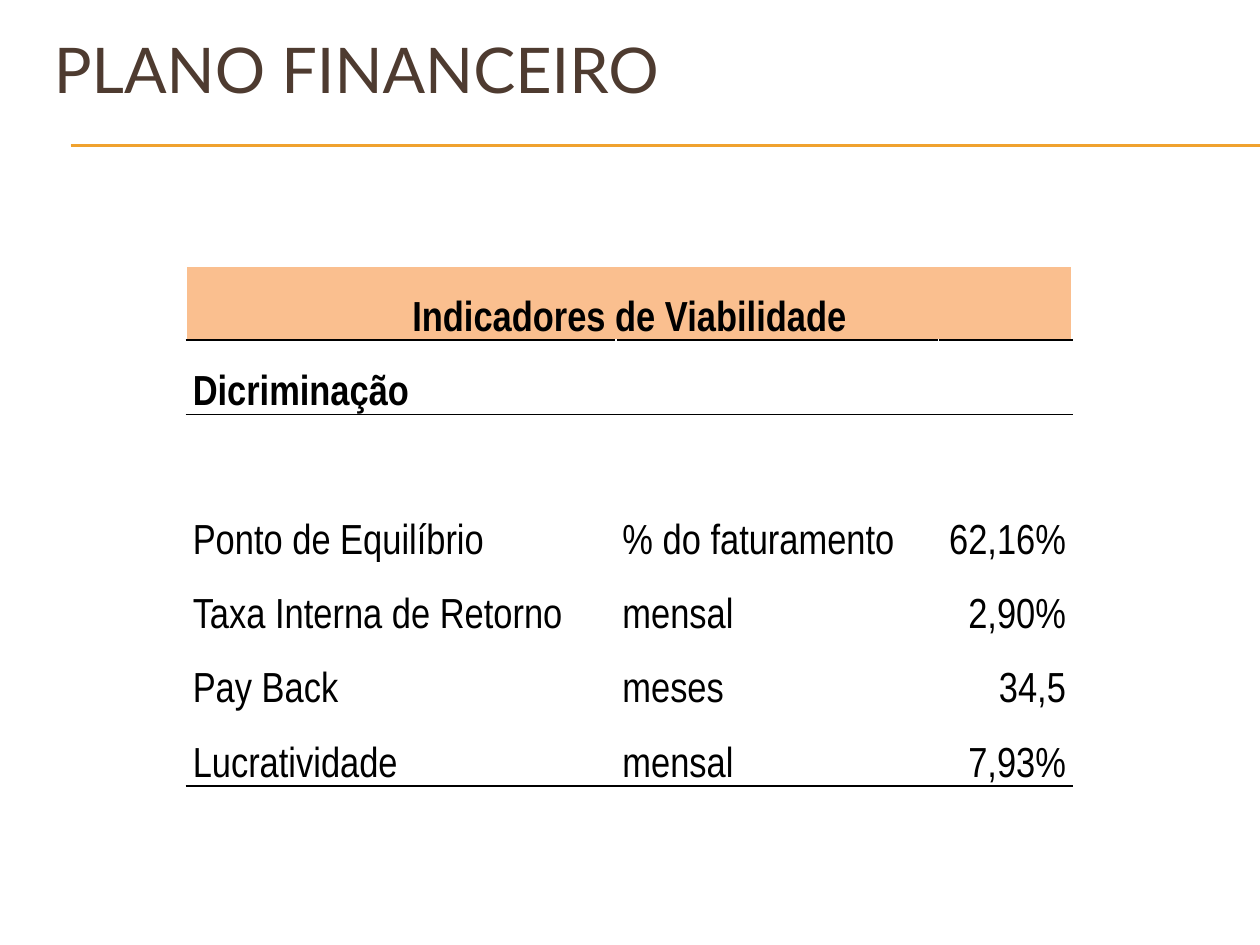
from dataclasses import dataclass

from lxml import etree
from pptx import Presentation
from pptx.dml.color import RGBColor
from pptx.enum.shapes import MSO_CONNECTOR
from pptx.enum.text import MSO_ANCHOR, PP_ALIGN
from pptx.oxml.ns import qn
from pptx.util import Pt

STRAIGHT = MSO_CONNECTOR.STRAIGHT
MIDDLE, BOTTOM = MSO_ANCHOR.MIDDLE, MSO_ANCHOR.BOTTOM
LEFT, CENTER, RIGHT = PP_ALIGN.LEFT, PP_ALIGN.CENTER, PP_ALIGN.RIGHT

EMU_PER_PX = 9144  # 100 px to the inch
BLACK, BROWN, GOLD, PEACH = "000000", "4E3B30", "F0A22E", "FABF8F"
COLUMN_WIDTHS = (341, 256, 106)
ROW_HEIGHTS = (59, 59, 118, 59, 59, 59)
COLUMN_ALIGNMENTS = (LEFT, LEFT, RIGHT)


@dataclass
class TableRow:
    texts: tuple[str, str, str]
    bold: bool = False
    borders: tuple[str, ...] = ()


ROWS = (
    TableRow(("Indicadores de Viabilidade", "", ""), True, ("a:lnB",)),
    TableRow(("Dicriminação", "", ""), True, ("a:lnT", "a:lnB")),
    TableRow(("Ponto de Equilíbrio", "% do faturamento", "62,16%"), borders=("a:lnT",)),
    TableRow(("Taxa Interna de Retorno", "mensal", "2,90%")),
    TableRow(("Pay Back", "meses", "34,5")),
    TableRow(("Lucratividade", "mensal", "7,93%"), borders=("a:lnB",)),
)


def px(length: int) -> int:
    return length * EMU_PER_PX


def color(hex_string: str) -> RGBColor:
    return RGBColor.from_string(hex_string)


def style_font(paragraph, name: str, size: int, hex_string: str, bold: bool = False) -> None:
    font = paragraph.font
    font.name, font.size, font.bold = name, Pt(size), bold
    font.color.rgb = color(hex_string)


def add_rule(slide, top: int) -> None:
    line = slide.shapes.add_connector(STRAIGHT, px(56), px(top), px(1000), px(top))
    line.line.color.rgb = color(GOLD)
    line.line.width = Pt(0.75)
    etree.SubElement(line._element.spPr, qn("a:effectLst"))


def add_title(slide, text: str) -> None:
    frame = slide.shapes.add_textbox(px(33), px(8), px(950), px(92)).text_frame
    frame.word_wrap = True
    frame.vertical_anchor = MIDDLE
    paragraph = frame.paragraphs[0]
    paragraph.text = text
    style_font(paragraph, "Lato", 36, BROWN)


def set_borders(cell, sides: tuple[str, ...]) -> None:
    properties = cell._tc.get_or_add_tcPr()
    for index, side in enumerate(sides):
        border = etree.Element(qn(side), w=str(Pt(1)))
        fill = etree.SubElement(border, qn("a:solidFill"))
        etree.SubElement(fill, qn("a:srgbClr"), val=BLACK)
        properties.insert(index, border)  # borders come before the fill


def fill_cell(cell, text: str, alignment: PP_ALIGN, row: TableRow) -> None:
    cell.margin_left = cell.margin_right = px(5)
    cell.margin_top = cell.margin_bottom = 0
    cell.vertical_anchor = BOTTOM
    cell.fill.background()
    paragraph = cell.text_frame.paragraphs[0]
    paragraph.text = text
    paragraph.alignment = alignment
    paragraph.line_spacing = 1.15
    style_font(paragraph, "Arial Narrow", 24, BLACK, row.bold)
    set_borders(cell, row.borders)


def add_indicator_table(slide) -> None:
    table = slide.shapes.add_table(
        len(ROWS), len(COLUMN_WIDTHS), px(148), px(211),
        px(sum(COLUMN_WIDTHS)), px(sum(ROW_HEIGHTS)),
    ).table
    table.first_row = table.horz_banding = False
    for column, width in zip(table.columns, COLUMN_WIDTHS):
        column.width = px(width)
    for table_row, height, row in zip(table.rows, ROW_HEIGHTS, ROWS):
        table_row.height = px(height)
        for cell, text, alignment in zip(table_row.cells, row.texts, COLUMN_ALIGNMENTS):
            fill_cell(cell, text, alignment, row)

    # Heading across all columns
    heading = table.cell(0, 0)
    heading.merge(table.cell(0, len(COLUMN_WIDTHS) - 1))
    heading.fill.solid()
    heading.fill.fore_color.rgb = color(PEACH)
    heading.text_frame.paragraphs[0].alignment = CENTER


def main() -> None:
    presentation = Presentation()
    presentation.slide_width, presentation.slide_height = px(1000), px(750)
    slide = presentation.slides.add_slide(presentation.slide_layouts[6])

    # Double rule under the title
    for top in (115, 116):
        add_rule(slide, top)
    add_title(slide, "PLANO FINANCEIRO")
    add_indicator_table(slide)
    presentation.save("out.pptx")


if __name__ == "__main__":
    main()
